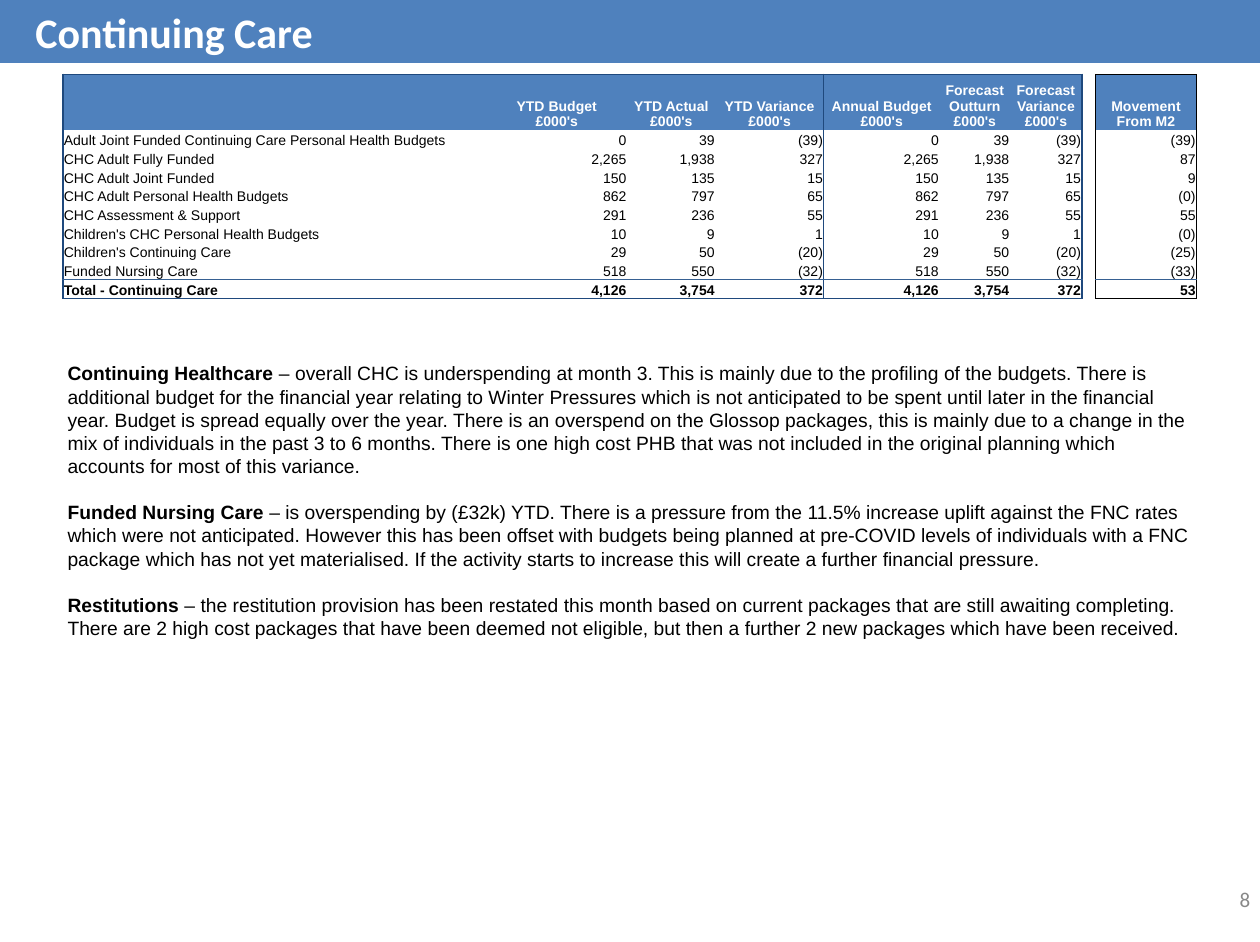
from lxml import etree
from pptx import Presentation
from pptx.dml.color import RGBColor
from pptx.enum import shapes, text
from pptx.oxml.ns import qn
from pptx.util import Pt

BLUE, WHITE, BLACK = "4F81BD", "FFFFFF", "000000"
OUTER, INNER, FRAME, RULE = ("1F497D", 1), ("1F497D", 0.5), (BLACK, 0.5), ("366092", 0.5)
LEFT_EDGES = {0: OUTER, 4: INNER, 7: OUTER, 8: FRAME}
RIGHT_EDGES = {3: INNER, 6: OUTER, 7: FRAME, 8: FRAME}
GAP_COL = 7

COL_WIDTHS = [241.9, 80.6, 50.4, 61.9, 66.2, 40.3, 41, 7.9, 57.6]
HEADER_HEIGHT, ROW_HEIGHT = 31.7, 10.7
HEADERS = ["", "YTD Budget\n£000's", "YTD Actual\n£000's", "YTD Variance\n£000's",
           "Annual Budget\n£000's", "Forecast Outturn\n£000's",
           "Forecast Variance\n£000's", "", "Movement From M2"]
# Label, budget, actual, variance, movement: year to date and forecast are equal
BUDGET_LINES = [
    ("Adult Joint Funded Continuing Care Personal Health Budgets", "0", "39", "(39)", "(39)"),
    ("CHC Adult Fully Funded", "2,265", "1,938", "327", "87"),
    ("CHC Adult Joint Funded", "150", "135", "15", "9"),
    ("CHC Adult Personal Health Budgets", "862", "797", "65", "(0)"),
    ("CHC Assessment & Support", "291", "236", "55", "55"),
    ("Children's CHC Personal Health Budgets", "10", "9", "1", "(0)"),
    ("Children's Continuing Care", "29", "50", "(20)", "(25)"),
    ("Funded Nursing Care", "518", "550", "(32)", "(33)"),
    ("Total - Continuing Care", "4,126", "3,754", "372", "53"),
]
COMMENTARY = [
    ("Continuing Healthcare ",
     "– overall CHC is underspending at month 3. This is mainly due to the profiling of the "
     "budgets. There is additional budget for the financial year relating to Winter Pressures "
     "which is not anticipated to be spent until later in the financial year. Budget is spread "
     "equally over the year. There is an overspend on the Glossop packages, this is mainly due "
     "to a change in the mix of individuals in the past 3 to 6 months. There is one high cost "
     "PHB that was not included in the original planning which accounts for most of this "
     "variance."),
    ("Funded Nursing Care ",
     "– is overspending by (£32k) YTD. There is a pressure from the 11.5% increase uplift "
     "against the FNC rates which were not anticipated. However this has been offset with "
     "budgets being planned at pre-COVID levels of individuals with a FNC package which has "
     "not yet materialised. If the activity starts to increase this will create a further "
     "financial pressure."),
    ("Restitutions ",
     "– the restitution provision has been restated this month based on current packages that "
     "are still awaiting completing. There are 2 high cost packages that have been deemed not "
     "eligible, but then a further 2 new packages which have been received."),
]


def rgb(value):
    return RGBColor.from_string(value)


def add_run(p, words, size, color=BLACK, bold=False, font="Arial"):
    r = p.add_run()
    r.text = words
    r.font.size, r.font.name, r.font.bold = Pt(size), font, bold
    r.font.color.rgb = rgb(color)


def set_border(cell, side, edge):
    """Draw one side (L, R, T or B) of a cell; edge is (colour, width) or None."""
    ln = etree.SubElement(cell._tc.get_or_add_tcPr(), qn(f"a:ln{side}"))
    if edge is None:
        ln.set("w", "0")
        etree.SubElement(ln, qn("a:noFill"))
        return
    color, width = edge
    ln.set("w", str(int(Pt(width))))
    fill = etree.SubElement(ln, qn("a:solidFill"))
    etree.SubElement(fill, qn("a:srgbClr")).set("val", color)


def cell_edges(row, col, last_row):
    """Borders by position: two framed blocks with a gap column between them."""
    frame = FRAME if col > GAP_COL else OUTER
    top = {0: frame, last_row: RULE}.get(row)
    bottom = {last_row - 1: RULE, last_row: frame}.get(row)
    if col == GAP_COL:
        top = bottom = None
    return {"L": LEFT_EDGES.get(col), "R": RIGHT_EDGES.get(col), "T": top, "B": bottom}


def fill_cell(cell, words, align, color, bold):
    cell.vertical_anchor = text.MSO_ANCHOR.BOTTOM
    cell.margin_left = cell.margin_right = cell.margin_top = Pt(0.5)
    cell.margin_bottom = 0
    p = cell.text_frame.paragraphs[0]
    p.alignment = align
    if not words:
        etree.SubElement(p._p, qn("a:endParaRPr")).set("sz", "800")
        return
    for i, line in enumerate(words.split("\n")):
        if i:
            p.add_line_break()
        add_run(p, line, 8, color, bold)


def add_budget_table(slide):
    rows = [HEADERS] + [(label, *figures, *figures, "", movement)
                        for label, *figures, movement in BUDGET_LINES]
    last = len(rows) - 1
    frame = slide.shapes.add_table(len(rows), len(HEADERS), Pt(36), Pt(42.5),
                                   Pt(sum(COL_WIDTHS)), Pt(HEADER_HEIGHT + last * ROW_HEIGHT))
    table = frame.table
    table.first_row = table.horz_banding = False
    # "No Style, No Grid"
    table._tbl.tblPr.find(qn("a:tableStyleId")).text = "{2D5ABB26-0587-4C30-8999-92F81FD0307C}"
    for column, width in zip(table.columns, COL_WIDTHS):
        column.width = Pt(width)
    for i, row in enumerate(rows):
        table.rows[i].height = Pt(ROW_HEIGHT if i else HEADER_HEIGHT)
        for j, words in enumerate(row):
            cell = table.cell(i, j)
            for side, edge in cell_edges(i, j, last).items():
                set_border(cell, side, edge)
            if j == GAP_COL or i == 0:
                cell.fill.solid()
                cell.fill.fore_color.rgb = rgb(WHITE if j == GAP_COL else BLUE)
            else:
                cell.fill.background()
            if i == 0:
                align = text.PP_ALIGN.CENTER
            else:
                align = text.PP_ALIGN.RIGHT if j else text.PP_ALIGN.LEFT
            fill_cell(cell, words, align, BLACK if i else WHITE, i in (0, last))


def add_title_bar(slide, title):
    sp = slide.shapes.add_shape(shapes.MSO_SHAPE.RECTANGLE, Pt(-0.5), 0, Pt(720.5), Pt(36))
    sp.shadow.inherit = False
    sp.fill.solid()
    sp.fill.fore_color.rgb = rgb(BLUE)
    sp.line.fill.background()
    tf = sp.text_frame
    tf.vertical_anchor = text.MSO_ANCHOR.TOP
    tf.auto_size = text.MSO_AUTO_SIZE.SHAPE_TO_FIT_TEXT
    p = tf.paragraphs[0]
    p.alignment = text.PP_ALIGN.LEFT
    p._p.get_or_add_pPr().set("marL", str(int(Pt(13.7))))
    add_run(p, title, 24, WHITE, True, "Calibri")


def add_commentary(slide):
    sp = slide.shapes.add_textbox(Pt(31.5), Pt(203), Pt(660), Pt(167))
    tf = sp.text_frame
    tf.word_wrap = True
    tf.auto_size = text.MSO_AUTO_SIZE.SHAPE_TO_FIT_TEXT
    for i, (topic, comment) in enumerate(COMMENTARY):
        p = tf.add_paragraph() if i else tf.paragraphs[0]
        p.space_before = Pt(13.3 if i else 0)
        add_run(p, topic, 11, bold=True)
        add_run(p, comment, 11)


def add_page_number(slide, number):
    sp = slide.shapes.add_textbox(Pt(556.5), Pt(499), Pt(161.5), Pt(29))
    tf = sp.text_frame
    tf.word_wrap = False
    tf.vertical_anchor = text.MSO_ANCHOR.MIDDLE
    tf.margin_left = tf.margin_right = Pt(3.6)
    p = tf.paragraphs[0]
    p.alignment = text.PP_ALIGN.RIGHT
    add_run(p, number, 12, "888888", font="Calibri")


def main():
    prs = Presentation()
    prs.slide_width, prs.slide_height = Pt(720), Pt(538)
    slide = prs.slides.add_slide(prs.slide_layouts[6])
    add_title_bar(slide, "Continuing Care")
    add_page_number(slide, "8")
    add_budget_table(slide)
    add_commentary(slide)
    prs.save("out.pptx")


if __name__ == "__main__":
    main()
